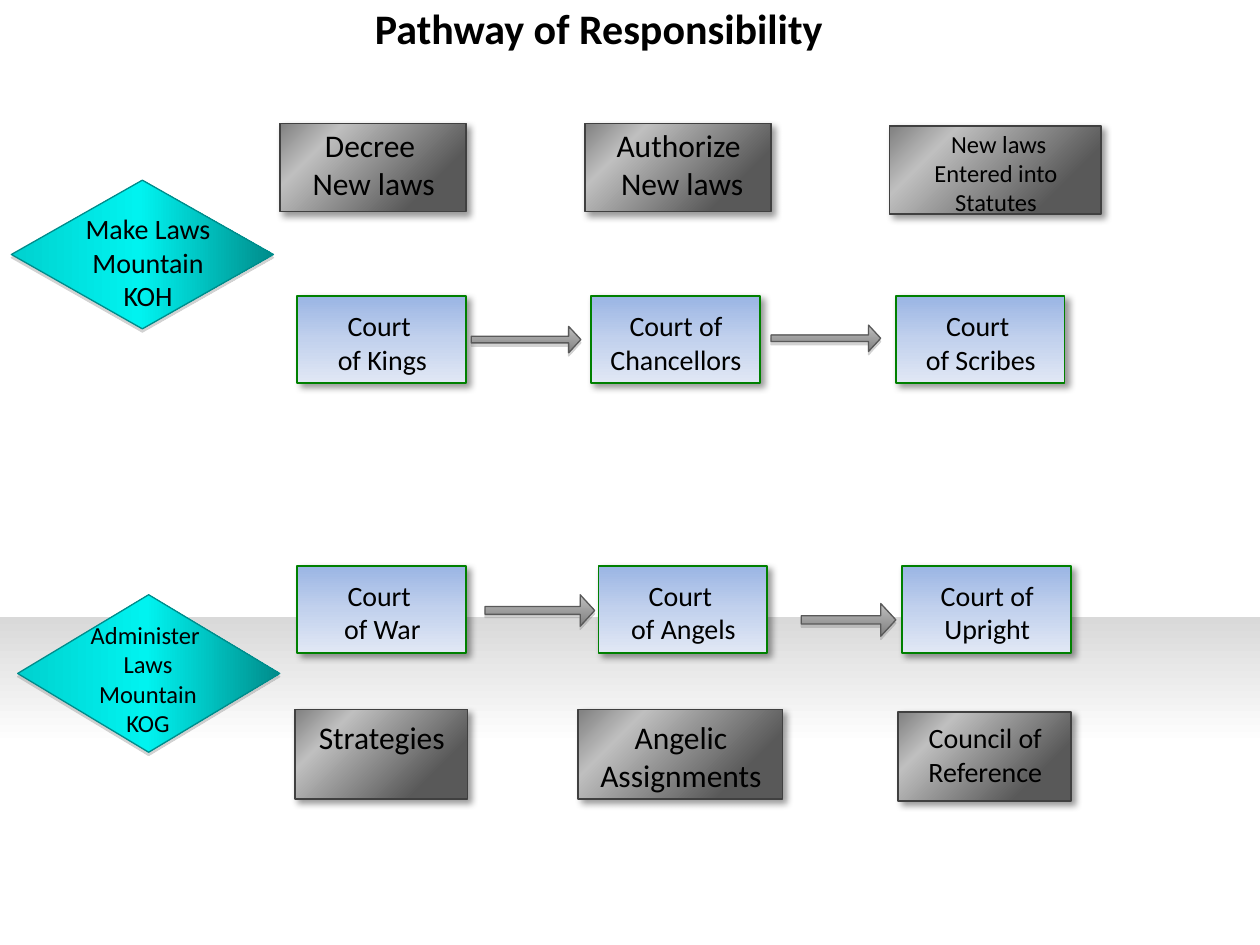
from dataclasses import dataclass

from lxml import etree
from pptx import Presentation
from pptx import util as u
from pptx.dml.color import RGBColor
from pptx.enum import shapes, text
from pptx.oxml import ns

Inches = u.Inches
KIND = shapes.MSO_SHAPE


@dataclass(frozen=True)
class Style:
    """Gradient stops and angle, outline, and shadow of a kind of shape."""
    stops: tuple
    angle: int
    line: tuple = None    # colour, points
    shadow: tuple = None  # colour, opacity %, blur, distance, angle


class Theme:
    font, ink = "Calibri", "000000"
    title, large, medium, small = 24, 18, 16, 14
    card_shadow = ("000000", 40, 4, 3, 45)
    soft_shadow = ("808080", 35, 0, 1.8, 90)
    floor = Style(((0, "D9D9D9"), (39, "FFFFFF"), (100, "FFFFFF")), 90)
    action = Style(((22, "595959"), (77, "BFBFBF"), (100, "808080")), 225,
                   ("404040", 1), card_shadow)
    court = Style(((0, "9AB5E4"), (50, "C2D1ED"), (100, "E1E8F5")), 90,
                  ("008000", 1), card_shadow)
    mountain = Style(((0, "00D1CF"), (49, "00F3F0"), (100, "008C8B")), 0,
                     ("008C8B", 0.75), soft_shadow)
    arrow = Style(((0, "BFBFBF"), (100, "7F7F7F")), 90,
                  ("595959", 0.75), soft_shadow)


def add_child(parent, tag, **attributes):
    child = etree.SubElement(parent, ns.qn(tag))
    for name, value in attributes.items():
        child.set(name, str(value))
    return child


def set_gradient(shape, style):
    """Replace the fill with a linear gradient, angle clockwise."""
    shape.fill.background()
    empty_fill = shape._element.spPr.find(ns.qn("a:noFill"))
    gradient = etree.Element(ns.qn("a:gradFill"), rotWithShape="1")
    stop_list = add_child(gradient, "a:gsLst")
    for position, color in style.stops:
        stop = add_child(stop_list, "a:gs", pos=position * 1000)
        add_child(stop, "a:srgbClr", val=color)
    add_child(gradient, "a:lin", ang=style.angle * 60000, scaled=0)
    empty_fill.getparent().replace(empty_fill, gradient)


def set_shadow(shape, shadow):
    color, opacity, blur, distance, angle = shadow
    effects = shape._element.spPr.find(ns.qn("a:effectLst"))
    outer = add_child(effects, "a:outerShdw", blurRad=u.Pt(blur),
                      dist=u.Pt(distance), dir=angle * 60000,
                      algn="ctr", rotWithShape=0)
    tint = add_child(outer, "a:srgbClr", val=color)
    add_child(tint, "a:alpha", val=opacity * 1000)


def add_figure(slide, kind, box, style):
    shape = slide.shapes.add_shape(kind, *map(Inches, box))
    shape.shadow.inherit = False
    set_gradient(shape, style)
    if style.line:
        color, width = style.line
        shape.line.color.rgb = RGBColor.from_string(color)
        shape.line.width = u.Pt(width)
    else:
        shape.line.fill.background()
    if style.shadow:
        set_shadow(shape, style.shadow)
    return shape


def add_label(slide, box, words, size, inset=True, bold=False):
    """Centred text; line breaks stay inside one paragraph."""
    frame = slide.shapes.add_textbox(*map(Inches, box)).text_frame
    margin_x, margin_y = (0.1, 0.05) if inset else (0, 0)
    frame_format = {
        "word_wrap": True, "auto_size": text.MSO_AUTO_SIZE.SHAPE_TO_FIT_TEXT,
        "margin_left": Inches(margin_x), "margin_right": Inches(margin_x),
        "margin_top": Inches(margin_y), "margin_bottom": Inches(margin_y),
    }
    for name, value in frame_format.items():
        setattr(frame, name, value)
    paragraph = frame.paragraphs[0]
    paragraph.alignment = text.PP_ALIGN.CENTER
    paragraph.text = words.replace("\n", "\v")
    font = paragraph.runs[0].font
    font.color.rgb = RGBColor.from_string(Theme.ink)
    for run in paragraph.runs:
        run_format = {"name": Theme.font, "size": u.Pt(size), "bold": bold}
        for name, value in run_format.items():
            setattr(run.font, name, value)
        run.font.color.rgb = RGBColor.from_string(Theme.ink)


def add_header(slide, box):
    add_label(slide, box, "Pathway of Responsibility ", Theme.title,
              inset=False, bold=True)


def add_lane(slide, left, top, lane):
    """One mountain with its courts, arrows and actions; offsets from left, top."""
    # Mountain
    x, y, width, height = lane["mountain"]
    x, y = left + x, top + y
    add_figure(slide, KIND.DIAMOND, (x, y, width, height), Theme.mountain)
    dx, dy, label_height = lane["mountain_label"]
    add_label(slide, (x + dx, y + dy, 1.57, label_height),
              lane["mountain_text"], lane["mountain_size"])

    # Actions
    pad, inset = lane["action_pad"], lane["action_inset"]
    for x, y, width, height, label_height, words, size in lane["actions"]:
        x, y = left + x, top + y
        add_figure(slide, KIND.RECTANGLE, (x, y, width, height), Theme.action)
        add_label(slide, (x + pad, y + 0.02, width - 2 * pad + 0.01, label_height),
                  words, size, inset)

    # Courts
    for x, words in lane["courts"]:
        x, y = left + x, top + lane["court_top"]
        add_figure(slide, KIND.RECTANGLE, (x, y, 1.34, 0.69), Theme.court)
        add_label(slide, (x + 0.04, y + 0.05, 1.27, 0.64), words, Theme.medium)

    # Arrows between courts
    for x, y, width, height in lane["arrows"]:
        arrow = add_figure(slide, KIND.RIGHT_ARROW,
                           (left + x, top + y, width, height), Theme.arrow)
        arrow.adjustments[0], arrow.adjustments[1] = 0.25, 0.46


MAKE_LAWS = {
    "mountain": (0, 0.45, 2.08, 1.18), "mountain_label": (0.3, 0.2, 0.91),
    "mountain_text": "Make Laws\nMountain\nKOH", "mountain_size": Theme.medium,
    "action_pad": 0.1, "action_inset": False,
    "actions": (
        (2.13, 0, 1.48, 0.7, 0.61, "Decree \nNew laws", Theme.large),
        (4.55, 0, 1.48, 0.7, 0.61, "Authorize\n New laws", Theme.large),
        (6.97, 0.02, 1.68, 0.7, 0.71,
         " New laws\nEntered into\nStatutes", Theme.small),
    ),
    "court_top": 1.37,
    "courts": ((2.27, "Court \nof Kings"), (4.6, "Court of Chancellors"),
               (7.02, "Court \nof Scribes")),
    "arrows": ((3.65, 1.61, 0.87, 0.21), (6.03, 1.6, 0.87, 0.21)),
}

ADMINISTER_LAWS = {
    "mountain": (0, 0.24, 2.08, 1.25), "mountain_label": (0.25, 0.15, 1.04),
    "mountain_text": "Administer \nLaws\nMountain\nKOG",
    "mountain_size": Theme.small,
    "action_pad": 0.05, "action_inset": True,
    "actions": (
        (2.2, 1.15, 1.37, 0.71, 0.4, "Strategies", Theme.large),
        (4.45, 1.15, 1.62, 0.71, 0.71, "Angelic Assignments", Theme.large),
        (6.99, 1.17, 1.37, 0.71, 0.64, "Council of Reference", Theme.medium),
    ),
    "court_top": 0.01,
    "courts": ((2.22, "Court \nof War"), (4.61, "Court \nof Angels"),
               (7.02, "Court of Upright")),
    "arrows": ((3.71, 0.24, 0.87, 0.25), (6.22, 0.31, 0.75, 0.26)),
}


def main():
    presentation = Presentation()
    presentation.slide_width, presentation.slide_height = Inches(10), Inches(7.5)
    slide = presentation.slides.add_slide(presentation.slide_layouts[6])
    add_figure(slide, KIND.RECTANGLE, (0, 4.9, 10, 2.6), Theme.floor)
    add_header(slide, (2.79, 0.02, 4, 0.4))
    add_lane(slide, 0.09, 0.98, MAKE_LAWS)
    add_lane(slide, 0.14, 4.48, ADMINISTER_LAWS)
    presentation.save("out.pptx")


if __name__ == "__main__":
    main()
